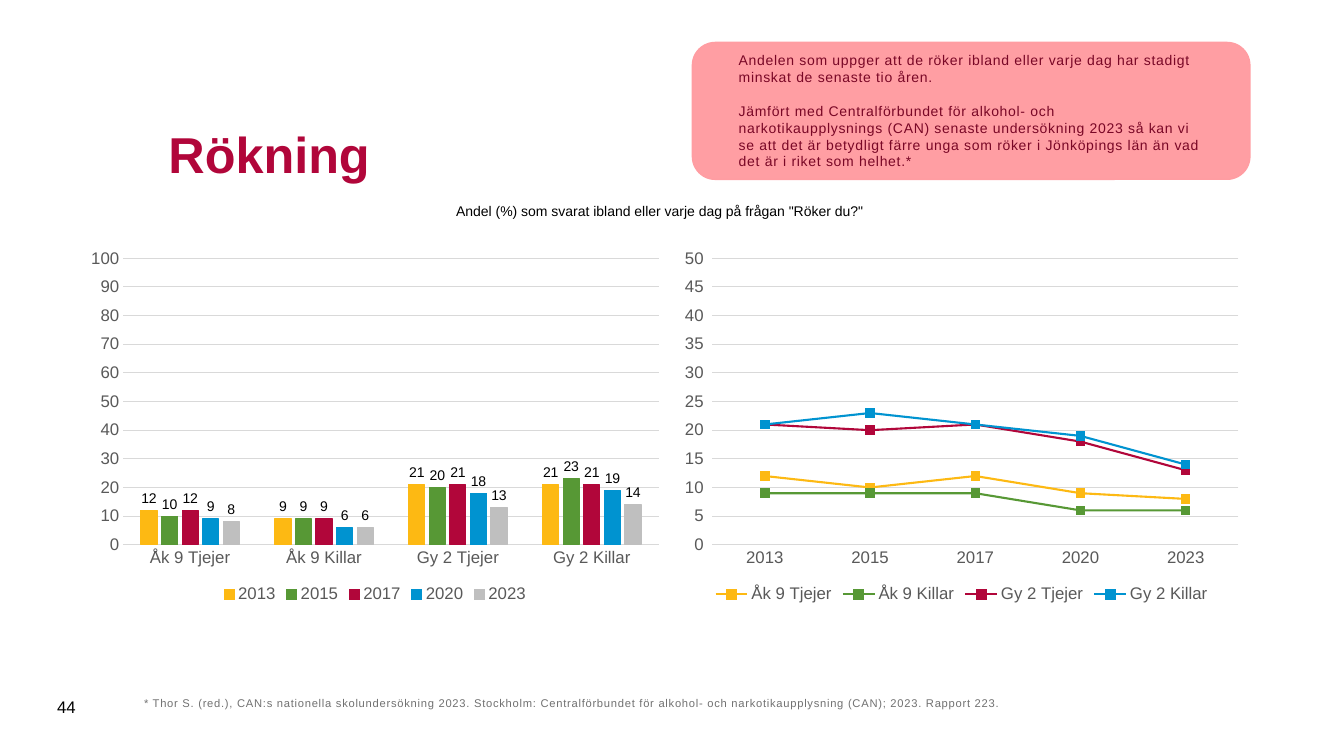
import pptx
import pptx.chart.data
import pptx.dml.color
import pptx.enum.chart
import pptx.enum.shapes
import pptx.enum.text
import pptx.oxml.ns
import pptx.util
from lxml import etree
from pptx.util import Cm

FONT = "Arial"
YELLOW, GREEN, CRIMSON, BLUE, SILVER = "FDB913", "579835", "B1063A", "0093D0", "BFBFBF"
GREY, GRID, BLACK, PINK = "595959", "D9D9D9", "000000", "FF9DA2"
GROUPS = ["Åk 9 Tjejer", "Åk 9 Killar", "Gy 2 Tjejer", "Gy 2 Killar"]
YEARS = ["2013", "2015", "2017", "2020", "2023"]
# Percent who smoke: one row per group, one column per year
SHARES = [
    [12, 10, 12, 9, 8],
    [9, 9, 9, 6, 6],
    [21, 20, 21, 18, 13],
    [21, 23, 21, 19, 14],
]


def colour(hex_string):
    return pptx.dml.color.RGBColor.from_string(hex_string)


def style_font(font, size, hex_string, bold=False):
    font.name = FONT
    font.size = pptx.util.Pt(size)
    font.bold = bold
    font.color.rgb = colour(hex_string)


def style_line(line, hex_string, width=0.75):
    line.color.rgb = colour(hex_string)
    line.width = pptx.util.Pt(width)


def write(frame, paragraphs, size, hex_string, bold=False, spacing=0,
          align="LEFT", gap=0):
    for index, words in enumerate(paragraphs):
        para = frame.add_paragraph() if index else frame.paragraphs[0]
        para.alignment = getattr(pptx.enum.text.PP_ALIGN, align)
        if index:
            para.space_before = pptx.util.Pt(gap)
        span = para.add_run()
        span.text = words
        style_font(span.font, size, hex_string, bold)
        if spacing:
            span.font._element.set("spc", str(int(spacing * 100)))


def set_insets(frame, across, down):
    frame.margin_left = frame.margin_right = Cm(across)
    frame.margin_top = frame.margin_bottom = Cm(down)


def add_title(page, words, left, top, width, height):
    title = page.shapes.title
    title.left, title.top, title.width, title.height = map(
        Cm, (left, top, width, height))
    title.text_frame.auto_size = pptx.enum.text.MSO_AUTO_SIZE.NONE
    title.text_frame.vertical_anchor = pptx.enum.text.MSO_ANCHOR.MIDDLE
    write(title.text_frame, [words], 36, CRIMSON, bold=True)


def add_text(page, words, left, top, width, height, size, hex_string, **style):
    box = page.shapes.add_textbox(Cm(left), Cm(top), Cm(width), Cm(height))
    box.text_frame.word_wrap = True
    write(box.text_frame, [words], size, hex_string, **style)
    return box.text_frame


def add_callout(page, paragraphs, left, top, width, height):
    box = page.shapes.add_shape(pptx.enum.shapes.MSO_SHAPE.ROUNDED_RECTANGLE,
                                Cm(left), Cm(top), Cm(width), Cm(height))
    box.shadow.inherit = False
    box.fill.solid()
    box.fill.fore_color.rgb = colour(PINK)
    fill = box._element.spPr.find(pptx.oxml.ns.qn("a:solidFill"))
    etree.SubElement(fill[0], pptx.oxml.ns.qn("a:alpha"), val="98000")
    style_line(box.line, PINK, 1)
    frame = box.text_frame
    frame.word_wrap = True
    frame.vertical_anchor = pptx.enum.text.MSO_ANCHOR.MIDDLE
    set_insets(frame, 1, 0.5)
    write(frame, paragraphs, 10, "790726", spacing=0.5, gap=12)


def add_share_chart(page, kind, categories, rows, left, width, top_value, step,
                    number_format):
    data = pptx.chart.data.CategoryChartData()
    data.categories = categories
    for name, values in rows:
        data.add_series(name, values)
    chart = page.shapes.add_chart(
        getattr(pptx.enum.chart.XL_CHART_TYPE, kind),
        Cm(left), Cm(6.1), Cm(width), Cm(9.2), data).chart
    chart.has_title = False
    style_font(chart.font, 10, BLACK)

    # Legend
    chart.has_legend = True
    chart.legend.position = pptx.enum.chart.XL_LEGEND_POSITION.BOTTOM
    chart.legend.include_in_layout = False
    style_font(chart.legend.font, 12, GREY)

    # Axes
    for axis in (chart.category_axis, chart.value_axis):
        axis.major_tick_mark = pptx.enum.chart.XL_TICK_MARK.NONE
        axis.minor_tick_mark = pptx.enum.chart.XL_TICK_MARK.NONE
        style_font(axis.tick_labels.font, 12, GREY)
    style_line(chart.category_axis.format.line, GRID)
    scale = chart.value_axis
    scale.minimum_scale, scale.maximum_scale, scale.major_unit = 0, top_value, step
    scale.format.line.fill.background()
    scale.has_major_gridlines = True
    style_line(scale.major_gridlines.format.line, GRID)
    scale.tick_labels.number_format = number_format
    scale.tick_labels.number_format_is_linked = False

    plot = chart.plots[0]
    plot.vary_by_categories = False
    return plot


def add_column_chart(page):
    number_format = "#,##0;#,##0"
    plot = add_share_chart(page, "COLUMN_CLUSTERED", GROUPS,
                           zip(YEARS, zip(*SHARES)), 2, 14.9, 100, 10,
                           number_format)
    plot.gap_width, plot.overlap = 219, -27
    for series, shade in zip(plot.series, (YELLOW, GREEN, CRIMSON, BLUE, SILVER)):
        series.format.fill.solid()
        series.format.fill.fore_color.rgb = colour(shade)
        style_line(series.format.line, shade)
        labels = series.data_labels
        labels.show_value = True
        labels.position = pptx.enum.chart.XL_LABEL_POSITION.OUTSIDE_END
        labels.number_format = number_format
        labels.number_format_is_linked = False
        style_font(labels.font, 10, BLACK)


def add_line_chart(page):
    plot = add_share_chart(page, "LINE_MARKERS", YEARS, zip(GROUPS, SHARES),
                           16.97, 14.53, 50, 5, r"#,##0_);\(#,##0\)")
    shades = [(YELLOW, YELLOW), (GREEN, GREEN), (CRIMSON, "CE1141"), (BLUE, "00B0F0")]
    for series, (shade, marker_shade) in zip(plot.series, shades):
        series.smooth = False
        style_line(series.format.line, shade, 1.5)
        marker = series.marker
        marker.style = pptx.enum.chart.XL_MARKER_STYLE.SQUARE
        marker.size = 6
        marker.format.fill.solid()
        marker.format.fill.fore_color.rgb = colour(marker_shade)
        style_line(marker.format.line, marker_shade)


def main():
    deck = pptx.Presentation()
    deck.slide_width, deck.slide_height = Cm(33.87), Cm(19.05)
    page = deck.slides.add_slide(deck.slide_layouts[5])

    # Heading
    add_title(page, "Rökning", 3.99, 2.06, 26.01, 3.61)

    # Footnote and page number
    footnote = add_text(
        page,
        "* Thor S. (red.), CAN:s nationella skolundersökning 2023. Stockholm: "
        "Centralförbundet för alkohol- och narkotikaupplysning (CAN); 2023. "
        "Rapport 223.",
        3.63, 17.55, 26.01, 0.84, 8, "717171", spacing=0.5)
    set_insets(footnote, 0, 0)
    number = add_text(page, "44", 1.19, 17.3, 1.45, 1.02, 12, BLACK)
    number.vertical_anchor = pptx.enum.text.MSO_ANCHOR.MIDDLE

    # Charts with their shared caption
    add_column_chart(page)
    add_line_chart(page)
    add_text(page,
             'Andel (%) som svarat ibland eller varje dag på frågan "Röker du?"',
             8.15, 4.98, 16.94, 0.69, 10, BLACK, align="CENTER")

    # Summary
    add_callout(page, [
        "Andelen som uppger att de röker ibland eller varje dag har stadigt "
        "minskat de senaste tio åren.",
        "Jämfört med Centralförbundet för alkohol- och narkotikaupplysnings "
        "(CAN) senaste undersökning 2023 så kan vi se att det är betydligt "
        "färre unga som röker i Jönköpings län än vad det är i riket som "
        "helhet.*",
    ], 17.45, 1.07, 14.05, 3.45)

    deck.save("out.pptx")


if __name__ == "__main__":
    main()
